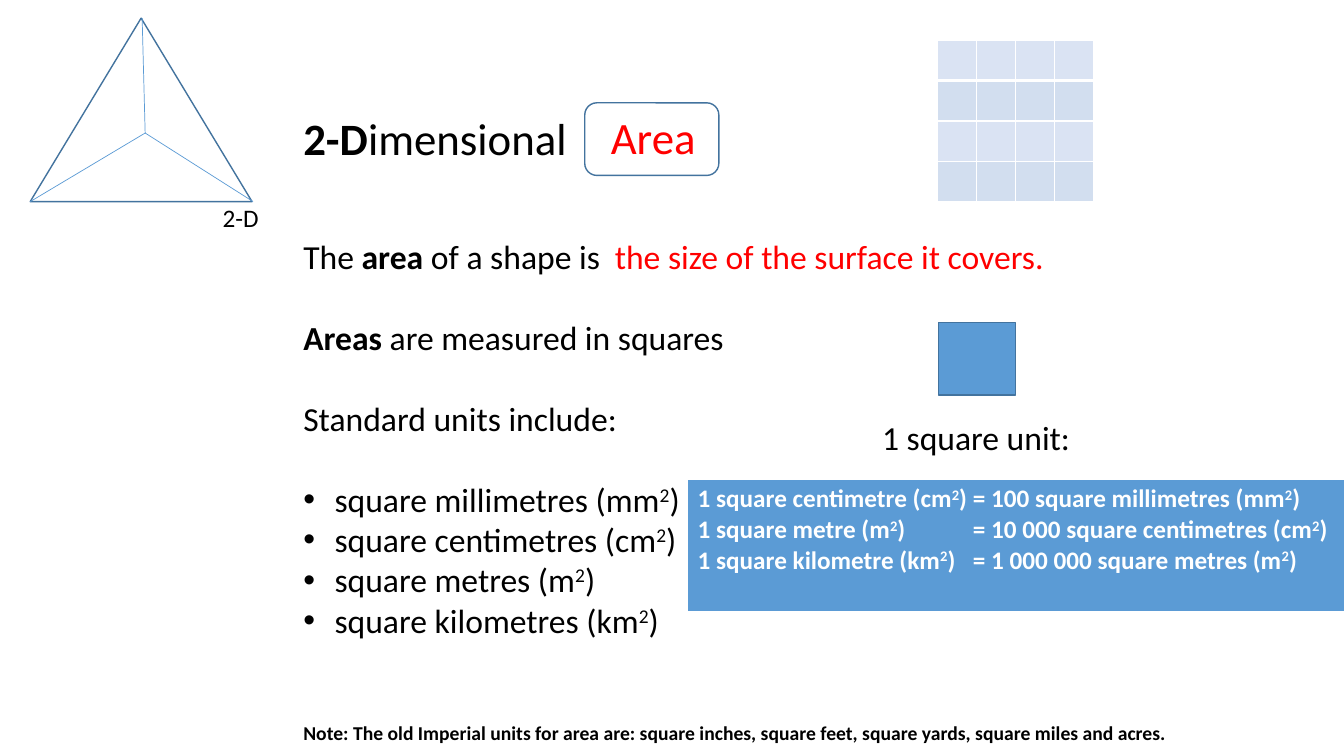
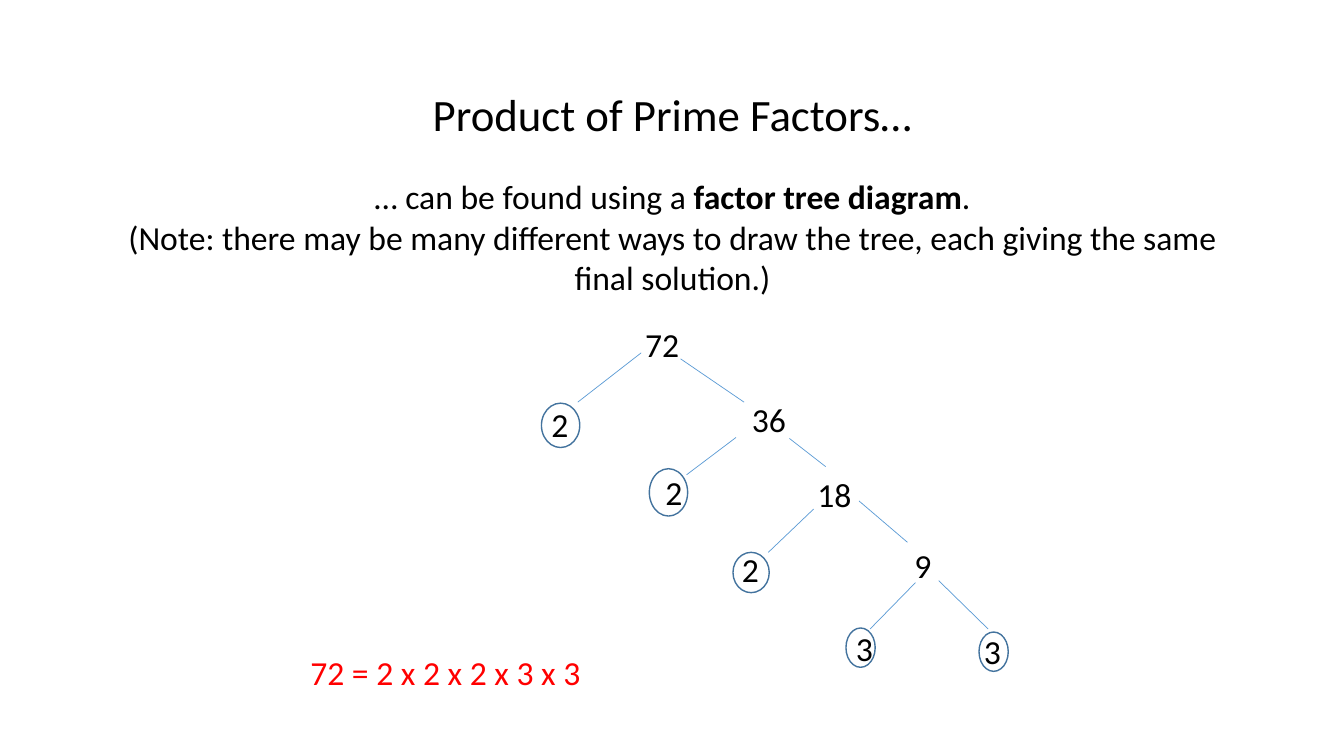
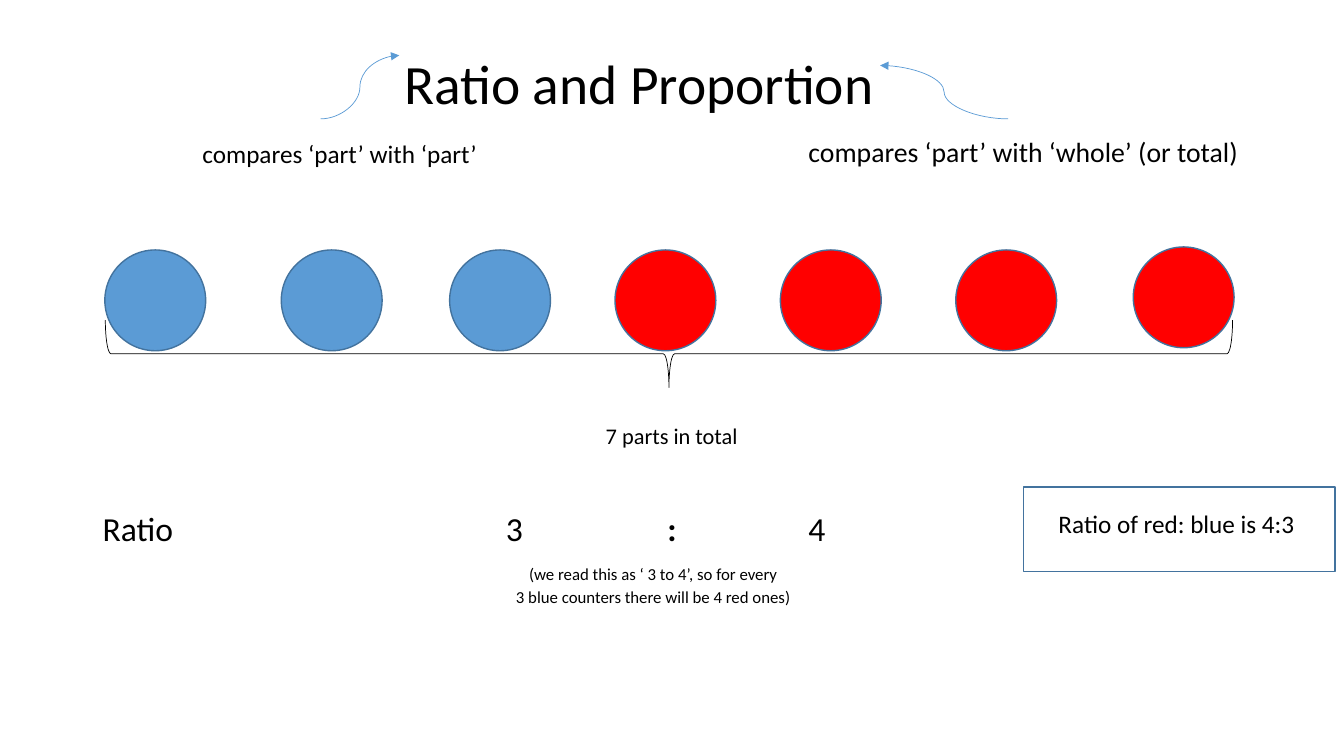
from lxml import etree
from pptx import Presentation, util as u
from pptx.dml.color import RGBColor
from pptx.enum import shapes, text
from pptx.oxml.ns import qn

COLS = 13.33
FONT = "Calibri"
BLACK, WHITE, RED, BLUE, EDGE = "000000", "FFFFFF", "FF0000", "5B9BD5", "43739E"
PALE, BAND = "DAE3F3", "D2DEEF"
KIND, LINK = shapes.MSO_SHAPE, shapes.MSO_CONNECTOR
CENTER, MIDDLE = text.PP_ALIGN.CENTER, text.MSO_ANCHOR.MIDDLE


def rgb(code):
    """Turn a hex string into a colour."""
    return RGBColor.from_string(code)


def apply(obj, **values):
    """Set attributes from a dict of format values."""
    for key, value in values.items():
        setattr(obj, key, value)


def sub(parent, tag, **attrs):
    """Append an XML element with attributes."""
    return etree.SubElement(parent, qn(tag), {k: str(v) for k, v in attrs.items()})


class Deck:
    """Style and current slide, placed on a grid of square cells."""

    def __init__(self):
        """Start a wide presentation."""
        self.prs = Presentation()
        apply(self.prs, slide_width=u.Inches(13.33), slide_height=u.Inches(7.5))
        self.cell = self.prs.slide_width / COLS

    def slide(self):
        """Add a blank slide and make it current."""
        self.s = self.prs.slides.add_slide(self.prs.slide_layouts[6])

    def grid(self, *cells):
        """Convert grid cells to lengths."""
        return [u.Emu(round(c * self.cell)) for c in cells]

    def outline(self, line, color, width):
        """Style a line."""
        line.color.rgb = rgb(color)
        line.width = u.Pt(width)

    def paragraphs(self, tf, paras, **style):
        """Fill a text frame; *stars* mark bold and ^carets^ superscript."""
        for i, para in enumerate(paras):
            content, own = para if isinstance(para, tuple) else (para, {})
            o = {"size": 24, "color": BLACK, "bold": False, "align": None,
                 "before": 0, "bullet": False, "tabs": (), **style, **own}
            p = tf.add_paragraph() if i else tf.paragraphs[0]
            apply(p, alignment=o["align"], space_before=u.Pt(o["before"]))
            pPr = p._p.get_or_add_pPr()
            if o["bullet"]:
                indent = self.grid(0.31)[0]
                pPr.set("marL", str(indent))
                pPr.set("indent", str(-indent))
                sub(pPr, "a:buFont", typeface="Arial")
                sub(pPr, "a:buChar", char="•")
            if o["tabs"]:
                tabs = sub(pPr, "a:tabLst")
                for pos in self.grid(*o["tabs"]):
                    sub(tabs, "a:tab", pos=pos, algn="l")
            for j, part in enumerate(content.split("*")):
                for k, bit in enumerate(part.split("^")):
                    if not bit:
                        continue
                    r = p.add_run()
                    r.text = bit
                    apply(r.font, name=FONT, size=u.Pt(o["size"]), bold=o["bold"] or j % 2 == 1)
                    r.font.color.rgb = rgb(o["color"])
                    if k % 2:
                        r.font._element.set("baseline", "30000")

    def text(self, box, *paras, anchor=text.MSO_ANCHOR.TOP, **style):
        """Add a wrapping text box."""
        tf = self.s.shapes.add_textbox(*self.grid(*box)).text_frame
        apply(tf, word_wrap=True, vertical_anchor=anchor)
        self.paragraphs(tf, paras, **style)

    def shape(self, kind, box, fill=None, line=EDGE, width=1, turn=0):
        """Add a preset shape."""
        sp = self.s.shapes.add_shape(kind, *self.grid(*box))
        apply(sp, rotation=turn)
        sp.shadow.inherit = False
        if fill:
            sp.fill.solid()
            sp.fill.fore_color.rgb = rgb(fill)
        else:
            sp.fill.background()
        self.outline(sp.line, line, width)

    def line(self, ends, kind=LINK.STRAIGHT, arrow=False):
        """Add a thin connector, with an arrowhead if asked."""
        c = self.s.shapes.add_connector(kind, *self.grid(*ends))
        self.outline(c.line, BLUE, 0.5)
        spPr = c._element.spPr
        if arrow:
            sub(spPr.find(qn("a:ln")), "a:tailEnd", type="triangle")
        sub(spPr, "a:effectLst")

    def table(self, box, rows, cols, fills):
        """Add a table with white borders and fills that alternate by row."""
        t = self.s.shapes.add_table(rows, cols, *self.grid(*box)).table
        apply(t, first_row=False, horz_banding=False)
        for n, row in enumerate(t.rows):
            for cell in row.cells:
                apply(cell, margin_top=u.Pt(3), margin_bottom=0)
                cell.fill.solid()
                cell.fill.fore_color.rgb = rgb(fills[n % len(fills)])
                tcPr = cell._tc.get_or_add_tcPr()
                for i, side in enumerate("LRTB"):
                    thick = n == 0 and side == "B" or n == 1 and side == "T"
                    ln = sub(tcPr, "a:ln" + side, w=u.Pt(3 if thick else 1))
                    sub(sub(ln, "a:solidFill"), "a:srgbClr", val=WHITE)
                    tcPr.insert(i, ln)
        return t


def area(d):
    """Build the slide on area."""
    d.slide()
    d.shape(KIND.ISOSCELES_TRIANGLE, (0.3, 0.18, 2.2, 1.82))
    d.text((2.11, 1.96, 0.71, 0.4), "2-D", size=18)
    units = ("millimetres (mm^2^)", "centimetres (cm^2^)", "metres (m^2^)", "kilometres (km^2^)")
    d.text((2.91, 1.05, 10.42, 6.43),
           ("*2-D*imensional", {"size": 32}),
           ("The *area* of a shape is", {"before": 51}),
           ("*Areas* are measured in squares", {"before": 29}),
           ("Standard units include:", {"before": 29}),
           *[("square " + name, {"bullet": True, "before": 0 if i else 29})
             for i, name in enumerate(units)],
           ("Note: The old Imperial units for area are: square inches, square feet, "
            "square yards, square miles and acres.", {"size": 14, "bold": True, "before": 58}))
    t = d.table((6.82, 4.76, 6.52, 1.32), 1, 1, [BLUE])
    d.paragraphs(t.cell(0, 0).text_frame,
                 ["1 square centimetre (cm^2^)\t= 100 square millimetres (mm^2^)",
                  "1 square metre (m^2^)\t= 10 000 square centimetres (cm^2^)",
                  "1 square kilometre (km^2^)\t= 1 000 000 square metres (m^2^)"],
                 size=18, color=WHITE, bold=True, tabs=(2.73,))
    d.shape(KIND.RECTANGLE, (9.31, 3.2, 0.76, 0.72), fill=BLUE)
    d.table((9.3, 0.4, 1.55, 1.6), 4, 4, [PALE, BAND])
    d.shape(KIND.ROUNDED_RECTANGLE, (5.8, 1.02, 1.33, 0.72))
    for corner in ((1.41, 0.18), (0.3, 2), (2.51, 2)):
        d.line((1.44, 1.32, *corner))
    d.text((5.96, 1.04, 1.3, 0.64), "Area", size=32, color=RED)
    d.text((6, 2.29, 5, 0.5), "the size of the surface it covers.", color=RED)
    d.text((8.65, 4.09, 2.4, 0.5), "1 square unit:")


def factors(d):
    """Build the slide on prime factors."""
    d.slide()
    d.text((0.92, 0.4, 11.5, 1.45), "Product of Prime Factors…",
           size=32, align=CENTER, anchor=MIDDLE)
    d.text((0.92, 1.7, 11.5, 1.4), "… can be found using a *factor tree diagram*.",
           "(Note: there may be many different ways to draw the tree, "
           "each giving the same final solution.)", align=CENTER)
    branches = ((6.36, 3.5, 5.73, 3.99), (6.75, 3.56, 7.38, 3.99),
                (7.3, 4.34, 6.81, 4.71), (7.83, 4.35, 8.19, 4.63),
                (8.07, 5.05, 7.62, 5.48), (8.52, 4.97, 9, 5.38),
                (9.08, 5.78, 8.63, 6.24), (9.31, 5.76, 9.8, 6.24))
    for ends in branches:
        d.line(ends)
    primes = ((5.37, 4, 0.38, 0.44), (6.44, 4.65, 0.38, 0.47), (7.27, 5.48, 0.36, 0.4),
              (8.39, 6.23, 0.29, 0.39), (9.71, 6.27, 0.29, 0.39))
    for box in primes:
        d.shape(KIND.OVAL, box)
    numbers = (("72", 6.3, 3.16), ("36", 7.36, 3.91), ("18", 8.01, 4.65), ("9", 8.97, 5.36),
               ("2", 5.37, 3.96), ("2", 6.5, 4.63), ("2", 7.26, 5.4),
               ("3", 8.39, 6.18), ("3", 9.66, 6.21))
    for number, x, y in numbers:
        d.text((x, y, 0.7, 0.5), number)
    d.text((2.98, 6.42, 3.2, 0.5), "72 = 2 x 2 x 2 x 3 x 3", color=RED)


def ratio(d):
    """Build the slide on ratio and proportion."""
    d.slide()
    d.text((3.91, 0.44, 5.2, 0.77), "Ratio and Proportion", size=39.6)
    d.text((1.91, 1.32, 3.2, 0.4), "compares ‘part’ with ‘part’", size=18)
    d.text((7.92, 1.29, 5, 0.43), "compares ‘part’ with ‘whole’ (or total)", size=19.8)
    d.text((5.91, 4.14, 2, 0.37), "7 parts in total", size=16)
    d.text((0.92, 4.99, 8, 0.5), "Ratio\t3\t*:*\t4", tabs=(4, 5.6, 7))
    d.text((4.98, 5.54, 3, 0.6), "(we read this as ‘ 3 to 4’, so for every",
           ("3 blue counters there will be 4 red ones)", {"before": 2.5}),
           size=12, align=CENTER)
    for i, x in enumerate((1.04, 2.79, 4.46, 6.1, 7.74, 9.48, 11.24)):
        d.shape(KIND.OVAL, (x, 2.45 if i == 6 else 2.48, 1, 1), fill=BLUE if i < 3 else RED)
    for ends in ((3.18, 1.18, 3.96, 0.55), (10, 1.18, 8.73, 0.65)):
        d.line(ends, LINK.CURVE, arrow=True)
    d.shape(KIND.LEFT_BRACE, (6.3, -2.08, 0.67, 11.18), line=BLACK, width=0.5, turn=270)
    d.shape(KIND.RECTANGLE, (10.15, 4.83, 3.09, 0.84))
    d.text((10.4, 4.99, 2.8, 0.4), "Ratio of red: blue is 4:3", size=18)


def main():
    """Build and save the deck."""
    d = Deck()
    for build in (area, factors, ratio):
        build(d)
    d.prs.save("out.pptx")


if __name__ == "__main__":
    main()
